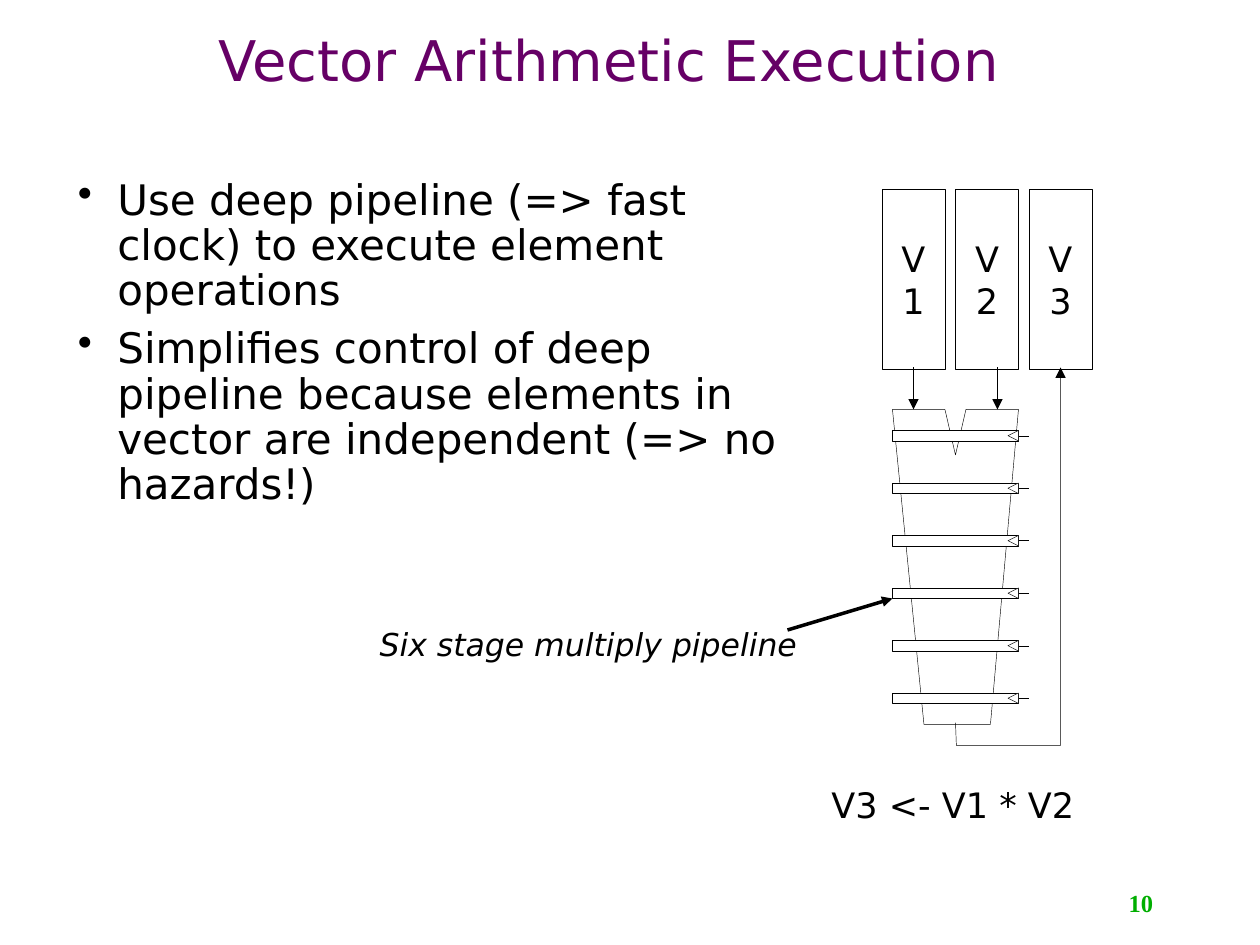
from lxml import etree
from pptx import Presentation
from pptx.dml.color import RGBColor
from pptx.enum import shapes, text
from pptx.oxml import ns
from pptx.util import Pt

COLORS = {"ink": "000000", "paper": "FFFFFF", "title": "660066", "number": "00AE00"}
BODY_FONT = "DejaVu Sans"
HAIRLINE = 0.25

TITLE = "Vector Arithmetic Execution"
POINTS = [
    "Use deep pipeline (=> fast clock) to execute element operations",
    "Simplifies control of deep pipeline because elements in vector are independent (=> no hazards!)",
]
REGISTERS = ["V1", "V2", "V3"]
FORMULA = "V3 <- V1 * V2"
PIPELINE_LABEL = "Six stage multiply pipeline"
PAGE_NUMBER = "10"

STAGE_COUNT = 6
STAGE_LEFT, STAGE_TOP, STAGE_PITCH = 510, 246, 30
STAGE_WIDTH, STAGE_HEIGHT = 72, 6
REGISTER_LEFT, REGISTER_TOP, REGISTER_PITCH = 504, 108, 42
REGISTER_WIDTH, REGISTER_HEIGHT = 36, 103
REGISTER_BOTTOM = 210
MULTIPLIER = [(510, 234), (528, 414), (566, 414), (582, 234),
              (552, 234), (546, 260), (540, 234)]
RESULT_PATH = [(546, 413), (546.5, 426), (606, 426), (606, REGISTER_BOTTOM)]
OPERAND_X = [570, 522]


def rgb(name):
    return RGBColor.from_string(COLORS[name])


def outline(part, width=HAIRLINE, arrow=False):
    part.line.color.rgb = rgb("ink")
    part.line.width = Pt(width)
    if arrow:
        etree.SubElement(part.line._get_or_add_ln(), ns.qn("a:tailEnd"), type="triangle")


def paint(part, fill=None):
    part.shadow.inherit = False
    if fill:
        part.fill.solid()
        part.fill.fore_color.rgb = rgb(fill)
    else:
        part.fill.background()


def write(part, lines, size, color="ink", font=BODY_FONT, align="LEFT",
          anchor="MIDDLE", wrap=True, spacing=None, bold=False, italic=False):
    frame = part.text_frame
    frame.text = "\n".join(lines)
    frame.word_wrap = wrap
    frame.vertical_anchor = text.MSO_ANCHOR[anchor]
    for paragraph in frame.paragraphs:
        paragraph.alignment = text.PP_ALIGN[align]
        if spacing:
            paragraph.line_spacing = spacing
        for run in paragraph.runs:
            run.font.name = font
            run.font.size = Pt(size)
            run.font.bold = bold
            run.font.italic = italic
            run.font.color.rgb = rgb(color)
    return frame


def textbox(canvas, box, lines, size, **style):
    return write(canvas.add_textbox(*map(Pt, box)), lines, size, **style)


def rectangle(canvas, box, fill=None):
    part = canvas.add_shape(shapes.MSO_SHAPE.RECTANGLE, *map(Pt, box))
    paint(part, fill)
    outline(part)
    return part


def polygon(canvas, corners, fill=None, closed=True, arrow=False):
    start, *rest = [(Pt(x), Pt(y)) for x, y in corners]
    builder = canvas.build_freeform(*start)
    builder.add_line_segments(rest, close=closed)
    part = builder.convert_to_shape()
    paint(part, fill)
    outline(part, arrow=arrow)


def connect(canvas, start, end, width=HAIRLINE, arrow=False):
    part = canvas.add_connector(shapes.MSO_CONNECTOR.STRAIGHT, *map(Pt, start + end))
    outline(part, width, arrow)
    etree.SubElement(part._element.spPr, ns.qn("a:effectLst"))


def add_bullets(frame):
    for index, paragraph in enumerate(frame.paragraphs):
        properties = paragraph._p.get_or_add_pPr()
        properties.set("marL", str(Pt(22.5)))
        properties.set("indent", str(Pt(-22.5)))
        if index:
            paragraph.space_before = Pt(7.2)
        etree.SubElement(properties, ns.qn("a:buChar"), char="•")


def add_stage(canvas, top):
    stage = canvas.add_group_shape().shapes
    right, middle = STAGE_LEFT + STAGE_WIDTH, top + STAGE_HEIGHT / 2
    rectangle(stage, (STAGE_LEFT, top, STAGE_WIDTH, STAGE_HEIGHT), "paper")
    polygon(stage, [(right, top + STAGE_HEIGHT), (right - STAGE_HEIGHT, middle),
                    (right, top)], "paper")
    connect(stage, (right + 0.5, middle), (right + 6, middle))


def main():
    deck = Presentation()
    deck.slide_width, deck.slide_height = Pt(720), Pt(540)
    canvas = deck.slides.add_slide(deck.slide_layouts[6]).shapes

    textbox(canvas, (516, 504.5, 150, 23), [PAGE_NUMBER], 14, color="number",
            font="Times New Roman", align="RIGHT", bold=True)
    textbox(canvas, (66, 12, 564, 48), [TITLE], 32, color="title",
            align="CENTER", spacing=0.9)
    add_bullets(textbox(canvas, (37.5, 98, 438, 197), POINTS, 24, spacing=0.9))

    polygon(canvas, MULTIPLIER)
    for stage in range(STAGE_COUNT):
        add_stage(canvas, STAGE_TOP + stage * STAGE_PITCH)
    for x in OPERAND_X:
        connect(canvas, (x, REGISTER_BOTTOM), (x, MULTIPLIER[0][1]), arrow=True)
    polygon(canvas, RESULT_PATH, closed=False, arrow=True)

    for column, register in enumerate(REGISTERS):
        left = REGISTER_LEFT + column * REGISTER_PITCH
        box = rectangle(canvas, (left, REGISTER_TOP, REGISTER_WIDTH, REGISTER_HEIGHT))
        write(box, [register], 20, align="CENTER")

    textbox(canvas, (468, 444, 160, 31), [FORMULA], 20, wrap=False)
    textbox(canvas, (209.5, 353.5, 253.5, 29), [PIPELINE_LABEL], 18,
            align="CENTER", anchor="TOP", wrap=False, italic=True)
    connect(canvas, (450, 360), (STAGE_LEFT, 342), width=2, arrow=True)

    deck.save("out.pptx")


if __name__ == "__main__":
    main()
